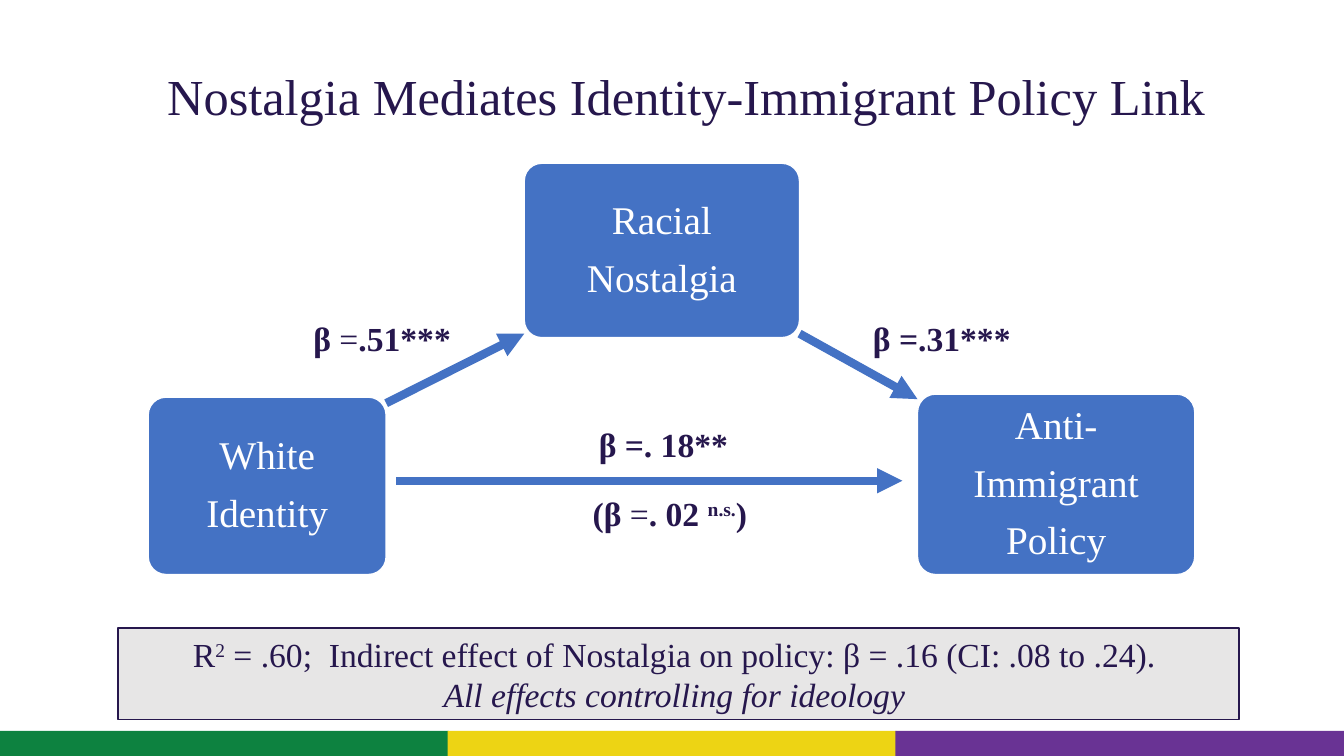
from lxml import etree
from pptx import Presentation
from pptx.dml.color import RGBColor
from pptx.enum import shapes as s, text as t
from pptx.oxml import ns
from pptx.util import Inches, Pt

INK = RGBColor(0x26, 0x17, 0x4D)
BLUE = RGBColor(0x44, 0x72, 0xC4)
WHITE = RGBColor(0xFF, 0xFF, 0xFF)
GREY = RGBColor(0xE7, 0xE6, 0xE6)
GREEN = RGBColor(0x0D, 0x82, 0x40)
GOLD = RGBColor(0xED, 0xD4, 0x14)
PLUM = RGBColor(0x69, 0x33, 0x94)
MID = t.PP_ALIGN.CENTER
LEFT = t.PP_ALIGN.LEFT


def block(kind, place, fill, edge=None):
    shape = slide.shapes.add_shape(kind, *map(Inches, place))
    shape.shadow.inherit = False
    shape.fill.solid()
    shape.fill.fore_color.rgb = fill
    if edge is None:
        shape.line.fill.background()
    else:
        shape.line.color.rgb = edge
        shape.line.width = Pt(1)
    return shape


def write(shape, lines, size, color, align=MID, bold=False, gap=0, lead=1.0):
    frame = shape.text_frame
    frame.word_wrap = True
    frame.vertical_anchor = t.MSO_ANCHOR.MIDDLE
    for n, line in enumerate(lines):
        para = frame.paragraphs[0] if n == 0 else frame.add_paragraph()
        para.alignment = align
        para.line_spacing = lead
        para.space_after = Pt(gap)
        font = para.font
        font.name = "Times New Roman"
        font.size = Pt(size)
        font.bold = bold
        font.color.rgb = color
        for words, style in line:
            run = para.add_run()
            run.text = words
            if style == "light":
                run.font.bold = False
            elif style == "italic":
                run.font.italic = True
            elif style == "super":
                run._r.get_or_add_rPr().set("baseline", "30000")


deck = Presentation()
deck.slide_width = Inches(13.33)
deck.slide_height = Inches(7.5)
slide = deck.slides.add_slide(deck.slide_layouts[6])

for n, color in enumerate((GREEN, GOLD, PLUM)):
    block(s.MSO_SHAPE.RECTANGLE, (n * 4.44, 7.25, 4.45, 0.25), color)

title = slide.shapes.add_textbox(Inches(1.17), Inches(0.53), Inches(11.28), Inches(0.91))
write(title, [[("Nostalgia Mediates Identity-Immigrant Policy Link", "")]], 36, INK, lead=0.9)

nodes = [
    ((1.47, 3.94, 2.36, 1.76), ("White", "Identity")),
    ((5.2, 1.62, 2.73, 1.73), ("Racial", "Nostalgia")),
    ((9.1, 3.91, 2.75, 1.79), ("Anti-", "Immigrant", "Policy")),
]
for place, words in nodes:
    node = block(s.MSO_SHAPE.ROUNDED_RECTANGLE, place, BLUE, WHITE)
    node.adjustments[0] = 0.1
    write(node, [[(word, "")] for word in words], 28, WHITE, gap=11, lead=0.9)

arrows = [
    (3.93, 4.77, 8.95, 4.77),
    (3.83, 4, 5.2, 3.31),
    (7.93, 3.31, 9.1, 3.96),
]
for ends in arrows:
    arrow = slide.shapes.add_connector(s.MSO_CONNECTOR.STRAIGHT, *map(Inches, ends))
    arrow.line.color.rgb = BLUE
    arrow.line.width = Pt(6)
    etree.SubElement(arrow.line._get_or_add_ln(), ns.qn("a:tailEnd"), type="triangle")
    etree.SubElement(arrow._element.spPr, ns.qn("a:effectLst"))

labels = [
    (3.01, 3.1, 1.84, [("β", ""), (" =", "light"), (".51***", "")]),
    (8.56, 3.1, 1.91, [("β =.31***", "")]),
    (5.84, 4.16, 1.65, [("β =. 18**", "")]),
    (5.78, 4.84, 2.16, [("(β", ""), (" =", "light"), (". 02 ", ""), ("n.s.", "super"), (")", "")]),
]
for left, top, width, line in labels:
    label = slide.shapes.add_textbox(Inches(left), Inches(top), Inches(width), Inches(0.5))
    write(label, [line], 24, INK, LEFT, bold=True)

note = block(s.MSO_SHAPE.RECTANGLE, (1.17, 6.23, 11.12, 0.91), GREY, INK)
write(note, [
    [("R", ""), ("2", "super"),
     (" = .60;  Indirect effect of Nostalgia on policy: β = .16 (CI: .08 to .24). ", "")],
    [("All effects controlling for ideology ", "italic")],
], 24, INK)

deck.save("out.pptx")
